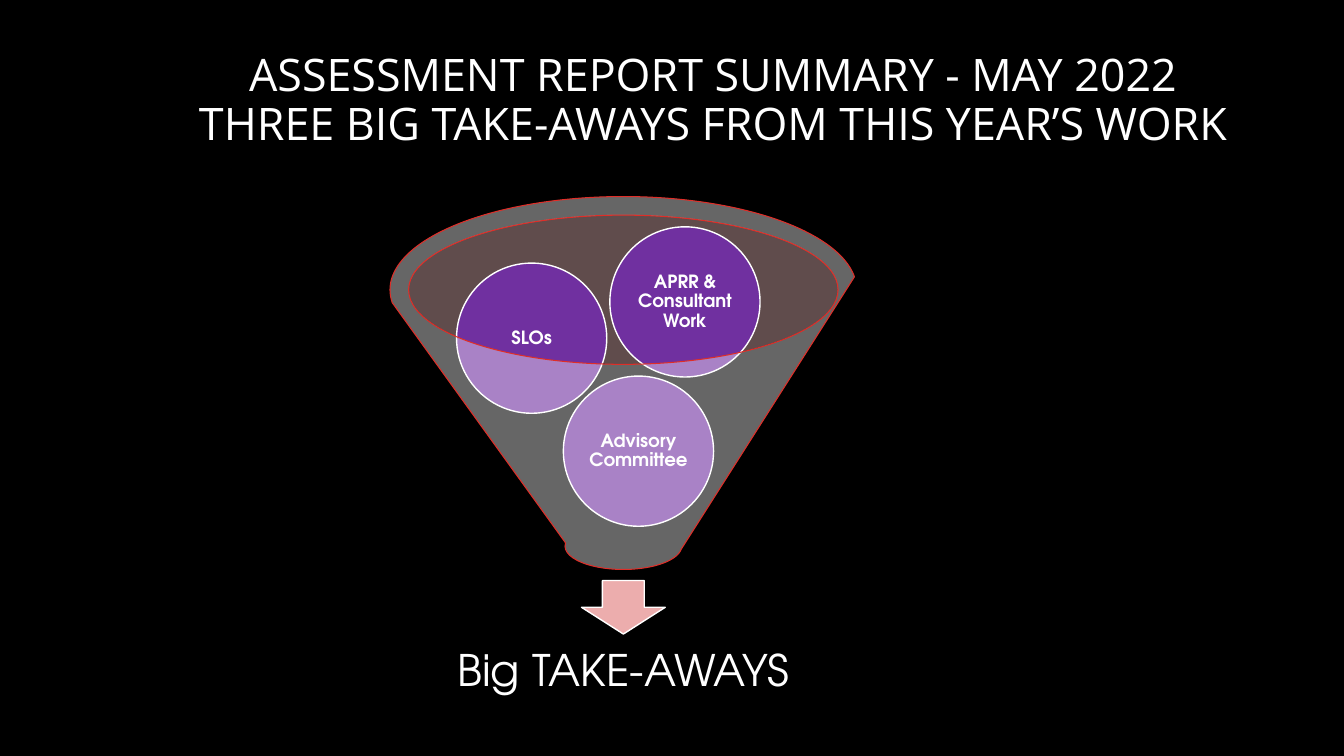
from lxml import etree
from pptx import Presentation
from pptx.dml.color import RGBColor
from pptx.enum.shapes import MSO_SHAPE as SHAPE
from pptx.enum.text import MSO_ANCHOR as ANCHOR, MSO_AUTO_SIZE as AUTO, PP_ALIGN as ALIGN
from pptx.oxml.ns import qn
from pptx.util import Pt

BLACK = RGBColor(0x00, 0x00, 0x00)
WHITE = RGBColor(0xFF, 0xFF, 0xFF)
PURPLE = RGBColor(0x70, 0x30, 0xA0)
RED = RGBColor(0xDF, 0x2E, 0x28)
PINK = RGBColor(0xEC, 0xAD, 0xAD)
PALE_PINK = RGBColor(0xF0, 0xBE, 0xBE)
TITLE_FONT = "Open Sans"
BODY_FONT = "TeX Gyre Adventor"
BALL_SIZE = 107.3
BALLS = [
    ("Advisory Committee", 123.8, 128.2),
    ("SLOs", 47.5, 47.5),
    ("APRR & Consultant Work", 157, 21.6),
]


def add_shape(s, kind, x, y, w, h, fill, line=None, line_width=1, alpha=None):
    sp = s.shapes.add_shape(kind, Pt(x), Pt(y), Pt(w), Pt(h))
    sp.shadow.inherit = False
    sp.fill.solid()
    sp.fill.fore_color.rgb = fill
    if alpha:
        color = sp.fill._xPr.find(qn("a:solidFill"))[0]
        etree.SubElement(color, qn("a:alpha")).set("val", str(alpha * 1000))
    if line is None:
        sp.line.fill.background()
    else:
        sp.line.color.rgb = line
        sp.line.width = Pt(line_width)
    return sp


def write(sp, text, size, font, margin, bold=False):
    tf = sp.text_frame
    tf.text = text
    tf.word_wrap = True
    tf.auto_size = AUTO.NONE
    tf.vertical_anchor = ANCHOR.MIDDLE
    tf.margin_left = tf.margin_right = tf.margin_top = tf.margin_bottom = Pt(margin)
    p = tf.paragraphs[0]
    p.alignment = ALIGN.CENTER
    p.line_spacing = 0.9
    p.font.size = Pt(size)
    p.font.name = font
    p.font.bold = bold
    p.font.color.rgb = WHITE


def add_title(s, x, y, w, h):
    title = s.shapes.title
    title.left, title.top, title.width, title.height = Pt(x), Pt(y), Pt(w), Pt(h)
    text = "ASSESSMENT REPORT SUMMARY - MAY 2022\vTHREE BIG TAKE-AWAYS FROM THIS YEAR’S WORK"
    write(title, text, 32, TITLE_FONT, 3.6)
    title.text_frame.margin_bottom = Pt(42)


def add_funnel(s, x, y, w, h):
    def centred(width):
        return x + (w - width) / 2

    add_shape(s, SHAPE.OVAL, centred(306.7), y + 13, 306.7, 106.6, PALE_PINK, alpha=40)
    add_shape(s, SHAPE.DOWN_ARROW, centred(59.8), y + h + 7.9, 59.8, 38.2, PINK, WHITE)
    label = s.shapes.add_textbox(Pt(centred(285.8)), Pt(y + h + 38.2), Pt(285.8), Pt(71.3))
    write(label, "Big TAKE-AWAYS", 31, BODY_FONT, 17.3)
    for text, dx, dy in BALLS:
        ball = add_shape(s, SHAPE.OVAL, x + dx, y + dy, BALL_SIZE, BALL_SIZE, PURPLE, WHITE)
        write(ball, text, 13, BODY_FONT, 1.4, bold=True)
    add_shape(s, SHAPE.FUNNEL, x, y, w, h, WHITE, RED, 0.75, alpha=40)


def main():
    prs = Presentation()
    prs.slide_width, prs.slide_height = Pt(960), Pt(540)
    s = prs.slides.add_slide(prs.slide_layouts[5])
    s.background.fill.solid()
    s.background.fill.fore_color.rgb = BLACK
    add_title(s, 107.3, 21.6, 805, 140.4)
    add_funnel(s, 278.6, 140.4, 333.4, 266.4)
    prs.save("out.pptx")


if __name__ == "__main__":
    main()
